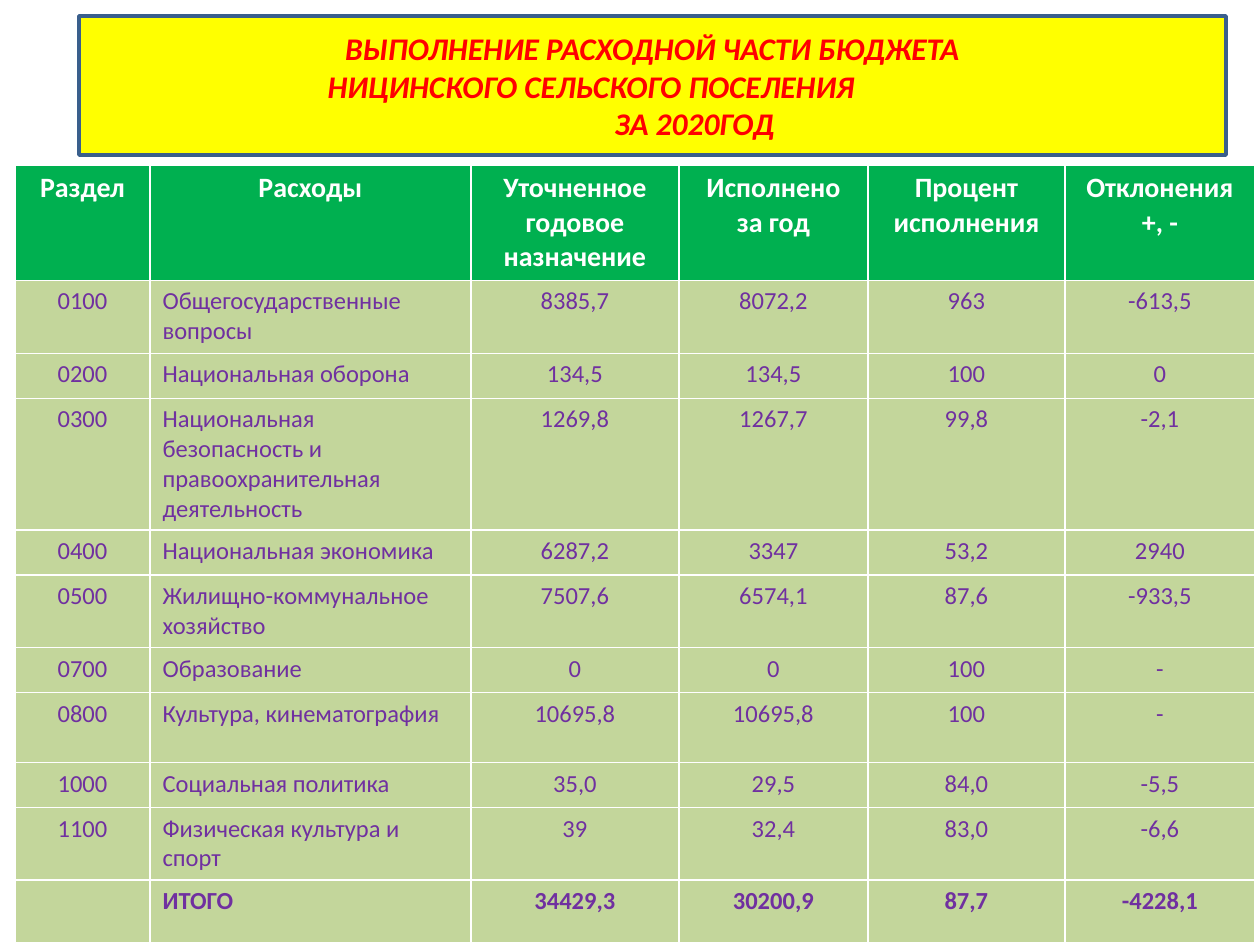
from pptx import Presentation
from pptx.dml.color import RGBColor
from pptx.enum.text import MSO_ANCHOR, MSO_AUTO_SIZE, PP_ALIGN
from pptx.util import Pt

PX = 914400 / 126
YELLOW = RGBColor(0xFF, 0xFF, 0x00)
RED = RGBColor(0xFF, 0x00, 0x00)
BLUE = RGBColor(0x3A, 0x5F, 0x8C)
GREEN = RGBColor(0x00, 0xB0, 0x50)
PALE_GREEN = RGBColor(0xC3, 0xD6, 0x9B)
PURPLE = RGBColor(0x70, 0x30, 0xA0)
WHITE = RGBColor(0xFF, 0xFF, 0xFF)

TITLE_LINES = [  # text, alignment, left indent in px
    ("ВЫПОЛНЕНИЕ РАСХОДНОЙ ЧАСТИ БЮДЖЕТА", PP_ALIGN.CENTER, 0),
    ("НИЦИНСКОГО СЕЛЬСКОГО ПОСЕЛЕНИЯ", PP_ALIGN.LEFT, 236),
    ("ЗА 2020ГОД", PP_ALIGN.CENTER, 84),
]
COLUMN_WIDTHS = [135, 321, 208, 189, 197, 190]
ROW_HEIGHTS = [114, 73, 45, 132, 45, 72, 45, 70, 45, 72, 63]
BUDGET = [
    ("Раздел", "Расходы", "Уточненное годовое назначение", "Исполнено за год",
     "Процент исполнения", "Отклонения +, -"),
    ("0100", "Общегосударственные вопросы", "8385,7", "8072,2", "963", "-613,5"),
    ("0200", "Национальная оборона", "134,5", "134,5", "100", "0"),
    ("0300", "Национальная безопасность и правоохранительная деятельность",
     "1269,8", "1267,7", "99,8", "-2,1"),
    ("0400", "Национальная экономика", "6287,2", "3347", "53,2", "2940"),
    ("0500", "Жилищно-коммунальное хозяйство", "7507,6", "6574,1", "87,6", "-933,5"),
    ("0700", "Образование", "0", "0", "100", "-"),
    ("0800", "Культура, кинематография", "10695,8", "10695,8", "100", "-"),
    ("1000", "Социальная политика", "35,0", "29,5", "84,0", "-5,5"),
    ("1100", "Физическая культура и спорт", "39", "32,4", "83,0", "-6,6"),
    ("", "ИТОГО", "34429,3", "30200,9", "87,7", "-4228,1"),
]


def px(length):
    return round(length * PX)


def style_font(font, size, color, bold):
    font.name = "Calibri"
    font.size = Pt(size)
    font.color.rgb = color
    font.bold = bold


prs = Presentation()
prs.slide_width, prs.slide_height = px(1260), px(945)
slide = prs.slides.add_slide(prs.slide_layouts[5])

# Heading
heading = slide.shapes.title
heading.left, heading.top, heading.width, heading.height = map(px, (79, 16, 1147, 139))
heading.fill.solid()
heading.fill.fore_color.rgb = YELLOW
heading.line.color.rgb = BLUE
heading.line.width = Pt(2)
frame = heading.text_frame
frame.word_wrap = True
frame.auto_size = MSO_AUTO_SIZE.NONE
frame.vertical_anchor = MSO_ANCHOR.MIDDLE
frame.text = "\n".join(text for text, _, _ in TITLE_LINES)
for line, (_, alignment, indent) in zip(frame.paragraphs, TITLE_LINES):
    line.alignment = alignment
    line._p.get_or_add_pPr().set("marL", str(px(indent)))
    style_font(line.font, 18, RED, True)
    line.font.italic = True

# Budget table
budget = slide.shapes.add_table(
    len(BUDGET), len(COLUMN_WIDTHS), px(15), px(165),
    px(sum(COLUMN_WIDTHS)), px(sum(ROW_HEIGHTS))).table
for column, width in zip(budget.columns, COLUMN_WIDTHS):
    column.width = px(width)
for r, (values, height) in enumerate(zip(BUDGET, ROW_HEIGHTS)):
    budget.rows[r].height = px(height)
    is_header, is_total = r == 0, r == len(BUDGET) - 1
    for c, value in enumerate(values):
        cell = budget.cell(r, c)
        cell.fill.solid()
        cell.fill.fore_color.rgb = GREEN if is_header else PALE_GREEN
        cell.text = value
        entry = cell.text_frame.paragraphs[0]
        is_name = c == 1 and not is_header
        entry.alignment = PP_ALIGN.LEFT if is_name else PP_ALIGN.CENTER
        style_font(entry.font, 16 if is_header else 14,
                   WHITE if is_header else PURPLE, is_header or is_total)

prs.save("out.pptx")
